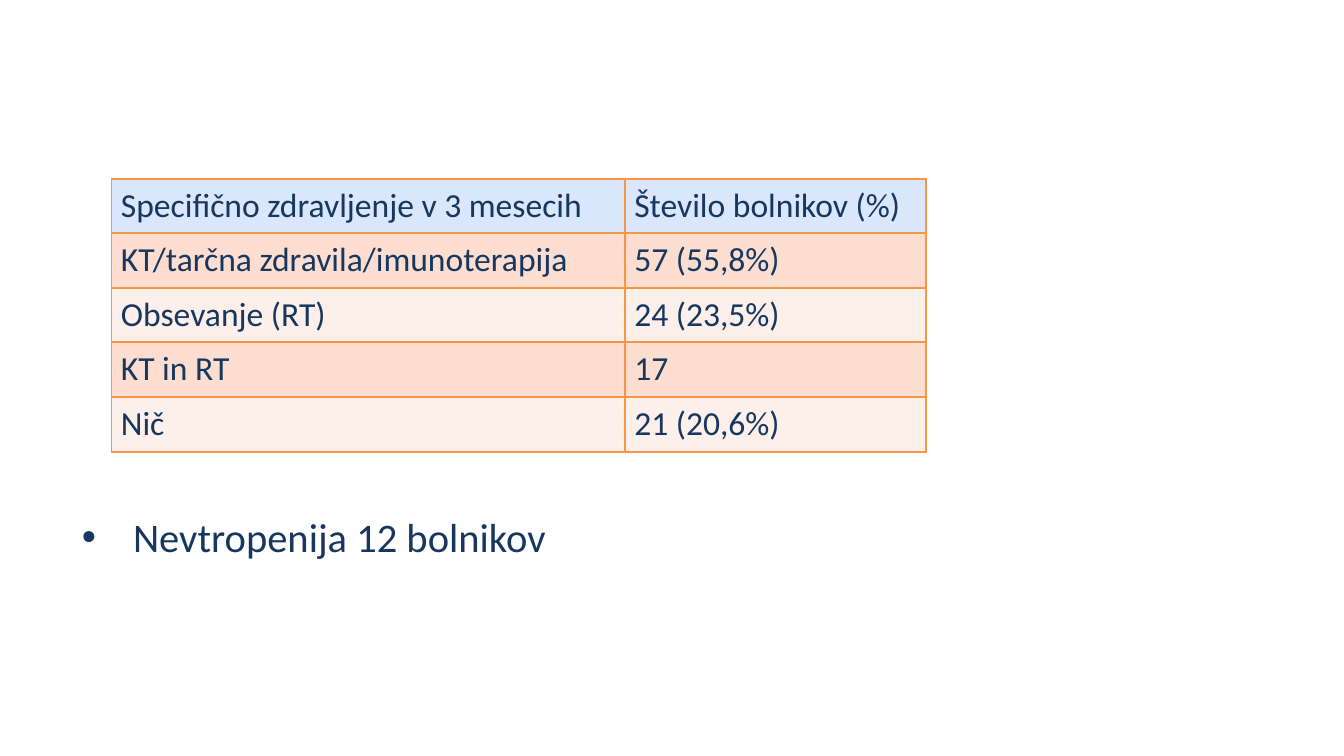
from lxml import etree
from pptx import Presentation
from pptx.dml.color import RGBColor
from pptx.enum.text import MSO_ANCHOR, MSO_AUTO_SIZE
from pptx.oxml.ns import qn
from pptx.util import Inches, Pt

TOP = MSO_ANCHOR.TOP
NO_AUTOFIT = MSO_AUTO_SIZE.NONE

SLIDE_WIDTH = 10
SLIDE_HEIGHT = SLIDE_WIDTH * 9 / 16

FONT = "Calibri"
NAVY = "17375E"
ORANGE = "F79646"
HEADER_FILL = "D9E6FB"
BAND_FILLS = ("FCDDCF", "FDEFE9")

TREATMENTS = [
    ("Specifično zdravljenje v 3 mesecih", "Število bolnikov (%)"),
    ("KT/tarčna zdravila/imunoterapija", "57 (55,8%)"),
    ("Obsevanje (RT)", "24 (23,5%)"),
    ("KT in RT", "17"),
    ("Nič", "21 (20,6%)"),
]
COLUMN_WIDTHS = (3.82, 2.24)
ROW_HEIGHTS = (0.38, 0.38, 0.38, 0.38, 0.41)
CELL_FORMAT = {
    "margin_left": Inches(0.07),
    "margin_right": Inches(0.07),
    "margin_top": Inches(0.05),
    "margin_bottom": Inches(0.05),
    "vertical_anchor": TOP,
}


def rgb(color):
    return RGBColor.from_string(color)


def set_attributes(target, values):
    for name, value in values.items():
        setattr(target, name, value)


def write_text(paragraph, text, size):
    run = paragraph.add_run()
    run.text = text
    set_attributes(run.font, {"name": FONT, "size": Pt(size), "bold": False})
    run.font.color.rgb = rgb(NAVY)


def add_borders(cell, color, width):
    """Put the four border lines before the cell's fill, as the schema asks."""
    properties = cell._tc.get_or_add_tcPr()
    for position, side in enumerate(("a:lnL", "a:lnR", "a:lnT", "a:lnB")):
        line = etree.Element(qn(side), w=str(Pt(width)))
        fill = etree.SubElement(line, qn("a:solidFill"))
        etree.SubElement(fill, qn("a:srgbClr"), val=color)
        properties.insert(position, line)


def add_treatment_table(slide, left, top):
    table = slide.shapes.add_table(
        len(TREATMENTS), len(COLUMN_WIDTHS), Inches(left), Inches(top),
        Inches(sum(COLUMN_WIDTHS)), Inches(sum(ROW_HEIGHTS)),
    ).table
    for column, width in zip(table.columns, COLUMN_WIDTHS):
        column.width = Inches(width)
    for index, (row, height) in enumerate(zip(table.rows, ROW_HEIGHTS)):
        row.height = Inches(height)
        row_fill = BAND_FILLS[(index - 1) % 2] if index else HEADER_FILL
        for cell, text in zip(row.cells, TREATMENTS[index]):
            set_attributes(cell, CELL_FORMAT)
            cell.fill.solid()
            cell.fill.fore_color.rgb = rgb(row_fill)
            add_borders(cell, ORANGE, 1)
            write_text(cell.text_frame.paragraphs[0], text, 18)


def fill_body(body, text):
    set_attributes(body, {
        "left": Inches(0.51), "top": Inches(3.76),
        "width": Inches(6.78), "height": Inches(0.39),
    })
    set_attributes(body.text_frame, {
        "word_wrap": True, "auto_size": NO_AUTOFIT, "vertical_anchor": TOP,
    })
    paragraph = body.text_frame.paragraphs[0]
    write_text(paragraph, text, 21.7)
    properties = paragraph._p.get_or_add_pPr()
    properties.set("marL", str(Inches(0.38)))
    properties.set("indent", str(-Inches(0.38)))
    spacing = etree.SubElement(properties, qn("a:spcBef"))
    etree.SubElement(spacing, qn("a:spcPct"), val="20000")
    etree.SubElement(properties, qn("a:buFont"), typeface="Arial")
    etree.SubElement(properties, qn("a:buChar"), char="•")


def main():
    presentation = Presentation()
    set_attributes(presentation, {
        "slide_width": Inches(SLIDE_WIDTH),
        "slide_height": Inches(SLIDE_HEIGHT),
    })
    slide = presentation.slides.add_slide(presentation.slide_layouts[1])
    empty_title = slide.shapes.title.element
    empty_title.getparent().remove(empty_title)
    add_treatment_table(slide, 0.83, 1.33)
    fill_body(slide.placeholders[1], "Nevtropenija 12 bolnikov")
    presentation.save("out.pptx")


if __name__ == "__main__":
    main()
